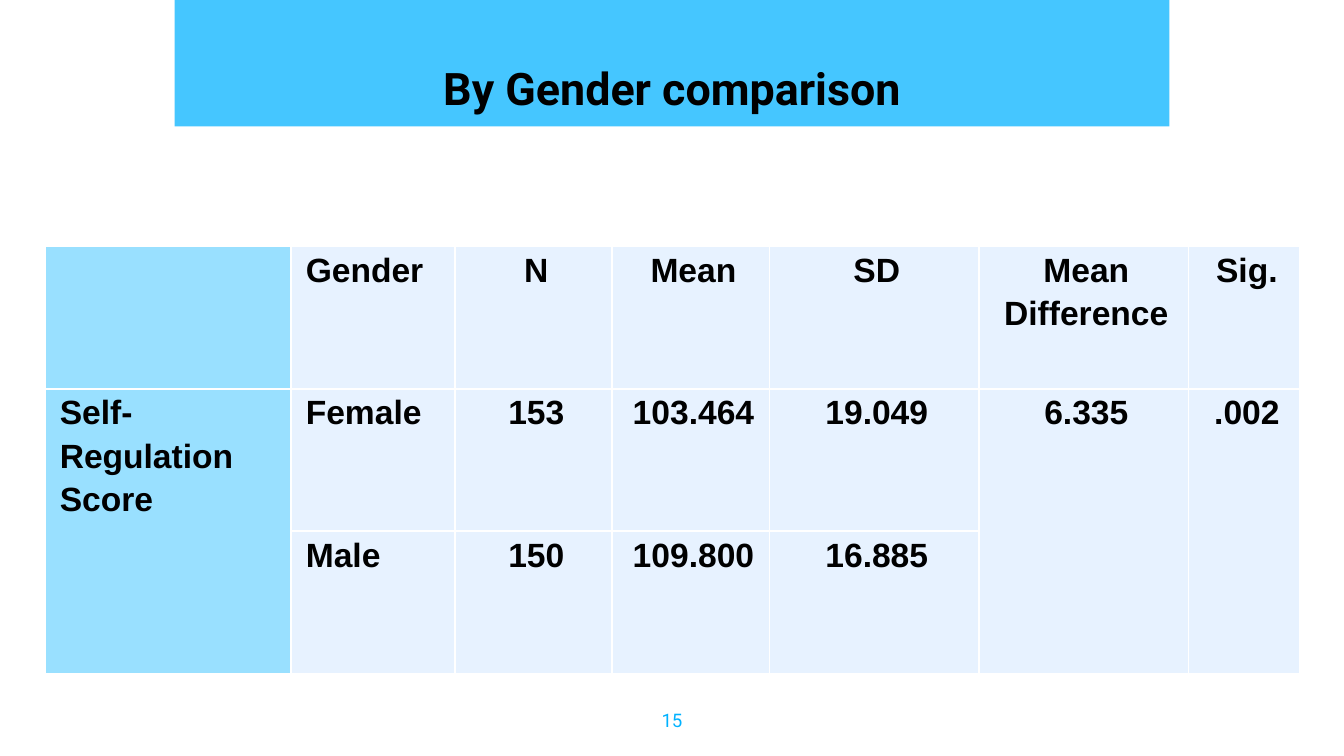
from lxml.etree import SubElement
from pptx import Presentation
from pptx.dml.color import RGBColor
from pptx.enum.shapes import MSO_SHAPE
from pptx.enum.text import PP_ALIGN
from pptx.oxml.ns import qn
from pptx.util import Cm, Pt

COLORS = {"accent": "00B2FF", "label": "99E0FF", "body": "E7F2FF",
          "line": "FFFFFF", "text": "000000"}

TITLE = "By Gender comparison"
PAGE = "15"
ROWS = [
    ["", "Gender", "N", "Mean", "SD", "Mean Difference", "Sig."],
    ["Self-Regulation Score", "Female", "153", "103.464", "19.049", "6.335", ".002"],
    ["", "Male", "150", "109.800", "16.885", "", ""],
]
COL_WIDTHS = [4.65, 3.1, 2.97, 2.97, 3.96, 3.96, 2.11]
ROW_HEIGHT = 2.69
MERGED_COLS = [0, 5, 6]  # these span the Female and Male rows
LEFT_COLS = [0, 1]


def rgb(name):
    return RGBColor.from_string(COLORS[name])


def put_text(tf, text, size, font="Roboto", color="text", bold=False,
             align=PP_ALIGN.CENTER, spacing=1.0, indent=0,
             side=0.25, top=0.25, bottom=0.25):
    tf.word_wrap = True
    tf.margin_left = tf.margin_right = Cm(side)
    tf.margin_top, tf.margin_bottom = Cm(top), Cm(bottom)
    p = tf.paragraphs[0]
    p.alignment, p.line_spacing = align, spacing
    p._p.get_or_add_pPr().set("marL", str(Cm(indent)))
    f = p.font
    if text:
        r = p.add_run()
        r.text = text
        f = r.font
    f.name, f.size, f.bold = font, Pt(size), bold
    f.color.rgb = rgb(color)


def add_borders(cell):
    tc_pr = cell._tc.get_or_add_tcPr()
    for side in ("lnL", "lnR", "lnT", "lnB"):
        ln = SubElement(tc_pr, qn(f"a:{side}"), w=str(Pt(1)))
        fill = SubElement(ln, qn("a:solidFill"))
        SubElement(fill, qn("a:srgbClr"), val=COLORS["line"])


prs = Presentation()
prs.slide_width, prs.slide_height = Cm(25.4), Cm(14.29)
s = prs.slides.add_slide(prs.slide_layouts[6])

banner = s.shapes.add_shape(MSO_SHAPE.RECTANGLE, Cm(3.3), 0, Cm(18.8), Cm(2.39))
banner.shadow.inherit = False
banner.line.fill.background()
banner.fill.solid()
banner.fill.fore_color.rgb = rgb("accent")
tint = banner._element.spPr.find(qn("a:solidFill")).find(qn("a:srgbClr"))
SubElement(tint, qn("a:alpha"), val="73000")

title = s.shapes.add_textbox(Cm(3.3), Cm(0.84), Cm(18.8), Cm(1.4))
put_text(title.text_frame, TITLE, 24, bold=True, top=0.3)

page = s.shapes.add_textbox(Cm(11.94), Cm(13.18), Cm(1.52), Cm(1.09))
put_text(page.text_frame, PAGE, 10, color="accent")

table = s.shapes.add_table(len(ROWS), len(COL_WIDTHS), Cm(0.85), Cm(4.66),
                           Cm(sum(COL_WIDTHS)), Cm(ROW_HEIGHT * len(ROWS))).table
for column, width in zip(table.columns, COL_WIDTHS):
    column.width = Cm(width)
for i, row in enumerate(ROWS):
    table.rows[i].height = Cm(ROW_HEIGHT)
    for j, text in enumerate(row):
        cell = table.cell(i, j)
        add_borders(cell)
        cell.fill.solid()
        cell.fill.fore_color.rgb = rgb("label" if j == 0 else "body")
        cell.margin_left = cell.margin_right = Cm(0.18)
        cell.margin_top = cell.margin_bottom = 0
        put_text(cell.text_frame, text, 18, font="Arial", bold=True,
                 align=PP_ALIGN.LEFT if j in LEFT_COLS else PP_ALIGN.CENTER,
                 spacing=1.15, indent=0.1, side=0, top=0, bottom=0)
for j in MERGED_COLS:
    table.cell(1, j).merge(table.cell(2, j))

prs.save("out.pptx")
